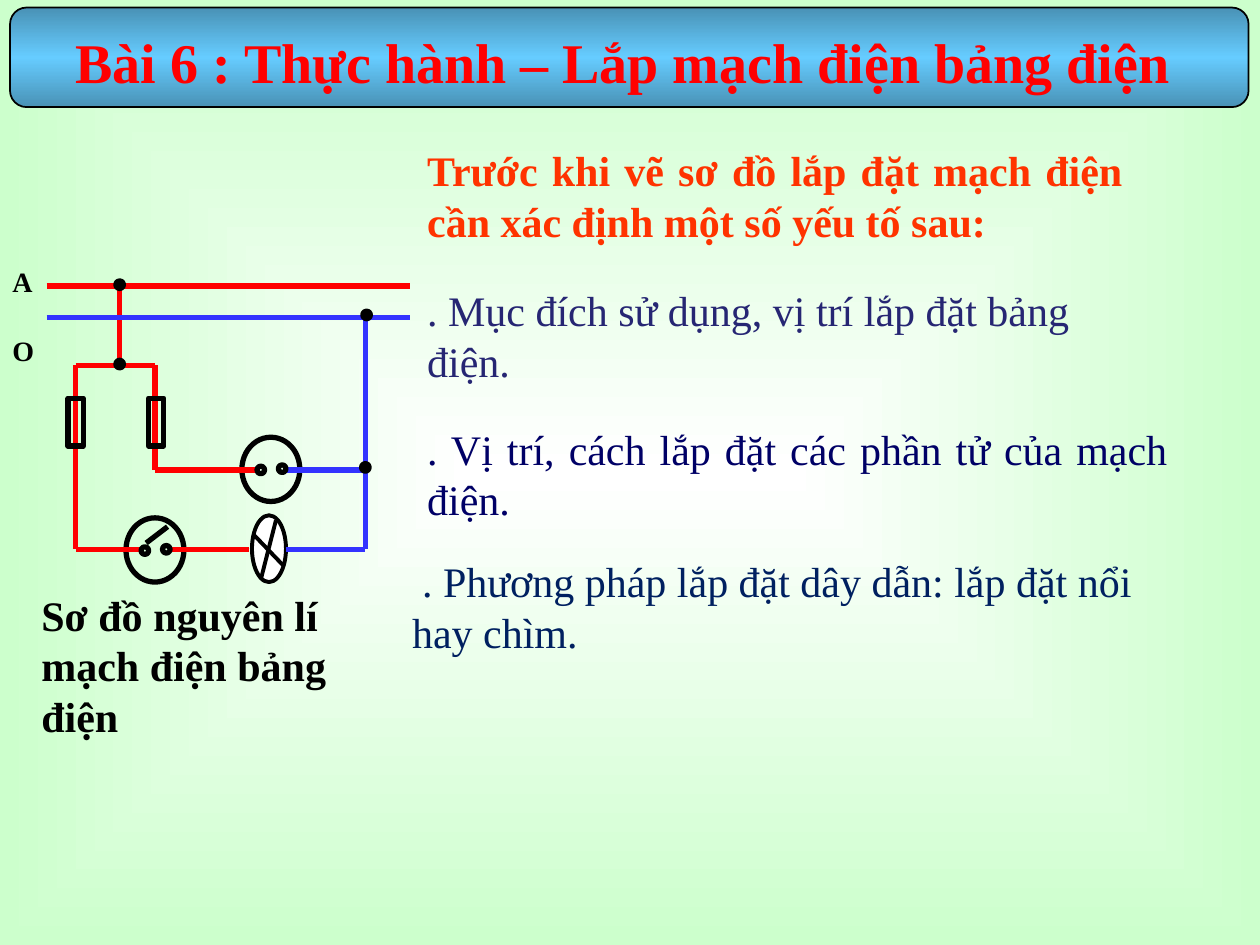
from pptx import Presentation
from pptx.dml.color import RGBColor
from pptx.enum.shapes import MSO_CONNECTOR, MSO_SHAPE
from pptx.enum.text import MSO_ANCHOR, MSO_AUTO_SIZE, PP_ALIGN
from pptx.oxml import parse_xml
from pptx.oxml.ns import nsdecls, qn
from pptx.util import Inches, Pt

STRAIGHT = MSO_CONNECTOR.STRAIGHT
OVAL, RECTANGLE, ROUNDED = MSO_SHAPE.OVAL, MSO_SHAPE.RECTANGLE, MSO_SHAPE.ROUNDED_RECTANGLE
LEFT, JUSTIFY = PP_ALIGN.LEFT, PP_ALIGN.JUSTIFY
TOP, NO_AUTOFIT = MSO_ANCHOR.TOP, MSO_AUTO_SIZE.NONE

BLACK = RGBColor(0, 0, 0)
WHITE = RGBColor(255, 255, 255)
RED = RGBColor(255, 0, 0)
BLUE = RGBColor(0x33, 0x33, 0xFF)
ORANGE = RGBColor(0xFF, 0x33, 0)
INDIGO = RGBColor(0x26, 0x26, 0x73)
NAVY = RGBColor(0, 0, 0x66)
DEEP_BLUE = RGBColor(0, 0x20, 0x60)
PALE_GREEN = RGBColor(0xCC, 0xFF, 0xCC)
STEEL = RGBColor(0x49, 0x92, 0xB6)
SKY = RGBColor(0x66, 0xCC, 0xFF)

COLUMNS, ROWS = 100, 75
COMPARISON_LAYOUT = 4
FROM_CENTRE = '<a:path path="shape"><a:fillToRect l="50000" t="50000" r="50000" b="50000"/></a:path>'
DOWNWARD = '<a:lin ang="5400000" scaled="1"/>'


class SlideBuilder:
    """Draws styled elements on one slide, measured in grid columns and rows."""

    font_name = "Times New Roman"

    def __init__(self, presentation):
        self.column = presentation.slide_width / COLUMNS
        self.row = presentation.slide_height / ROWS
        self.slide = presentation.slides.add_slide(presentation.slide_layouts[COMPARISON_LAYOUT])
        self.container = self.slide.shapes

    def place(self, *cells):
        units = (self.column, self.row) * 2
        return [round(cell * unit) for cell, unit in zip(cells, units)]

    def gradient(self, owner, fill, stops, direction):
        fill.gradient()
        element = next(owner.iter(qn("a:gradFill")))
        element.clear()
        marks = "".join(
            f'<a:gs pos="{position * 1000}"><a:srgbClr val="{color}"/></a:gs>'
            for position, color in stops)
        source = parse_xml(f'<a:gradFill {nsdecls("a")}><a:gsLst>{marks}</a:gsLst>{direction}</a:gradFill>')
        element.extend(list(source))

    def background(self, stops):
        self.gradient(self.slide.element, self.slide.background.fill, stops, FROM_CENTRE)

    def banner(self, at, stops):
        shape = self.outline(ROUNDED, at, 1)
        self.gradient(shape.element, shape.fill, stops, DOWNWARD)
        self.slide.shapes.element.insert(2, shape.element)

    def outline(self, kind, at, width=3, fill=None):
        shape = self.container.add_shape(kind, *self.place(*at))
        shape.shadow.inherit = False
        shape.line.color.rgb = BLACK
        shape.line.width = Pt(width)
        if fill is None:
            shape.fill.background()
        else:
            shape.fill.solid()
            shape.fill.fore_color.rgb = fill
        return shape

    def wire(self, points, color, width=3):
        for start, end in zip(points, points[1:]):
            connector = self.container.add_connector(STRAIGHT, *self.place(*start, *end))
            connector.line.color.rgb = color
            connector.line.width = Pt(width)
            connector.element.spPr.append(parse_xml(f'<a:effectLst {nsdecls("a")}/>'))

    def start_group(self):
        self.container = self.slide.shapes.add_group_shape().shapes

    def label(self, at, lines, size, gap=0):
        shape = self.container.add_textbox(*self.place(*at))
        self.set_text(shape, lines, size, BLACK, True, gap=gap)
        shape.text_frame.margin_right = 0 if len(lines) > 1 else Inches(0.1)

    def placeholder(self, index, at, text, size, color, bold=False, align=LEFT, indent=0):
        shape = self.slide.placeholders[index]
        shape.left, shape.top, shape.width, shape.height = self.place(*at)
        self.set_text(shape, [text], size, color, bold, align, indent)

    def set_text(self, shape, lines, size, color, bold, align=LEFT, indent=0, gap=0):
        frame = shape.text_frame
        frame.text = "\n".join(lines)
        frame_format = {"word_wrap": True, "auto_size": NO_AUTOFIT, "vertical_anchor": TOP}
        for name, value in frame_format.items():
            setattr(frame, name, value)
        font_format = {"name": self.font_name, "size": Pt(size), "bold": bold}
        for number, paragraph in enumerate(frame.paragraphs):
            paragraph.alignment = align
            paragraph.space_before = Pt(gap if number else 0)
            properties = paragraph._p.get_or_add_pPr()
            properties.set("marL", "0")
            properties.set("indent", str(round(indent * self.column)))
            properties.append(parse_xml(f'<a:buNone {nsdecls("a")}/>'))
            font = paragraph.runs[0].font
            for name, value in font_format.items():
                setattr(font, name, value)
            font.color.rgb = color


def draw_circuit(builder):
    """Draw the schematic of the switchboard with its labels."""
    builder.start_group()
    builder.outline(OVAL, (20, 40.9, 2.7, 5.3), 2.25, WHITE)
    builder.wire([(20.1, 42.4), (22.5, 44.9)], BLACK, 2.25)
    builder.wire([(21.9, 41.3), (20.7, 46)], BLACK, 2.25)
    for left, top in ((19.2, 34.7), (10, 41.1)):
        builder.outline(OVAL, (left, top, 4.6, 5.1))

    red_wires = (
        [(3.7, 22.7), (32.5, 22.7)],
        [(9.5, 22.7), (9.5, 29)],
        [(6, 29), (12.3, 29), (12.3, 37.3), (20.4, 37.3)],
        [(6, 29), (6, 43.6), (11.2, 43.6)],
        [(13.5, 43.6), (19.8, 43.6)],
    )
    blue_wires = (
        [(3.7, 25.2), (32.5, 25.2)],
        [(22.7, 37.3), (29, 37.3)],
        [(22.7, 43.6), (29, 43.6), (29, 25.2)],
    )
    for color, wires in ((RED, red_wires), (BLUE, blue_wires)):
        for points in wires:
            builder.wire(points, color)

    for left in (5.4, 11.8):
        builder.outline(RECTANGLE, (left, 31.6, 1.2, 3.8))
    for left, top in ((20.4, 37), (22.1, 36.9), (11.2, 43.4), (12.9, 43.3)):
        builder.outline(OVAL, (left, top, 0.6, 0.6))
    for left, top in ((9.2, 22.3), (9.2, 28.6), (28.7, 36.8), (28.8, 24.7)):
        builder.outline(OVAL, (left, top, 0.6, 0.6), fill=BLACK)
    builder.wire([(11.6, 43.1), (13.3, 41.8)], BLACK)
    builder.label((0, 20.5, 3, 6.5), ["A", "O"], 16, gap=20)
    builder.label((2.3, 46.3, 30.6, 9.2), ["Sơ đồ nguyên lí mạch điện bảng điện"], 24)


def main():
    """Build and save the lesson slide."""
    presentation = Presentation()
    presentation.slide_width, presentation.slide_height = Inches(10), Inches(7.5)
    builder = SlideBuilder(presentation)
    builder.background([(0, WHITE), (100, PALE_GREEN)])
    builder.banner((0.8, 0.6, 98.3, 7.9), [(0, STEEL), (50, SKY), (100, STEEL)])
    builder.placeholder(0, (1.7, 1.7, 98.3, 6.3), "Bài 6 : Thực hành – Lắp mạch điện bảng điện",
                        32, RED, True, JUSTIFY, 3.3)
    builder.placeholder(1, (32.9, 11, 57.2, 9.1),
                        "Trước khi vẽ sơ đồ lắp đặt mạch điện cần xác định một số yếu tố sau:",
                        24, ORANGE, True, JUSTIFY)
    builder.placeholder(2, (32.9, 22.1, 59.4, 9.1),
                        ". Mục đích sử dụng, vị trí lắp đặt bảng điện.", 24, INDIGO)
    builder.placeholder(3, (32.9, 33.1, 60.8, 9.1),
                        ". Vị trí, cách lắp đặt các phần tử của mạch điện.", 24, NAVY, align=JUSTIFY)
    builder.placeholder(4, (31.7, 43.6, 59.5, 9.1),
                        ". Phương pháp lắp đặt dây dẫn: lắp đặt nổi hay chìm.", 24, DEEP_BLUE, indent=0.8)
    draw_circuit(builder)
    presentation.save("out.pptx")


if __name__ == "__main__":
    main()
